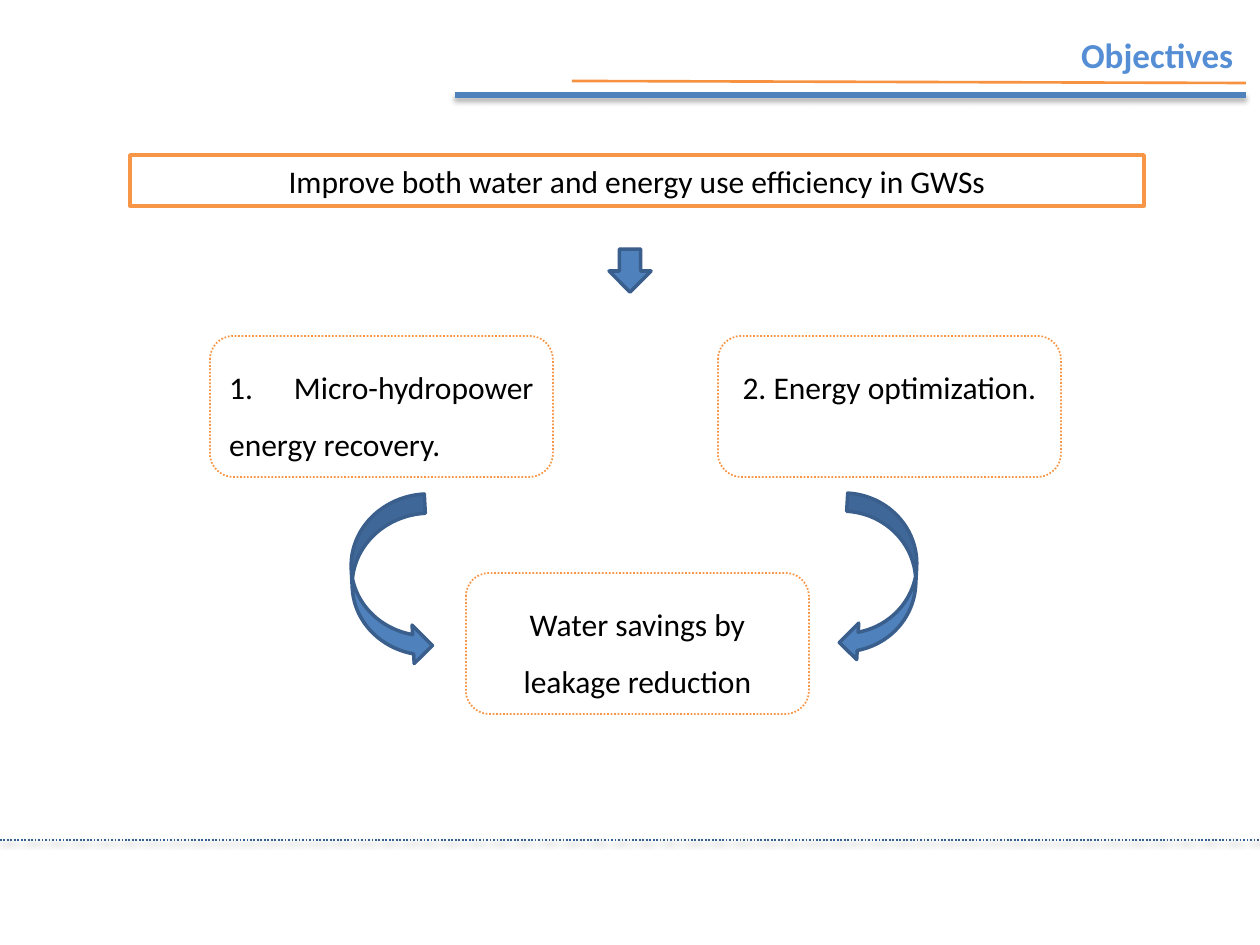
import lxml.etree
import pptx
import pptx.util
import pptx.dml.color
import pptx.enum.dml
import pptx.enum.shapes
import pptx.enum.text
import pptx.oxml

RGB = pptx.dml.color.RGBColor
SHAPE = pptx.enum.shapes.MSO_SHAPE
ALIGN = pptx.enum.text.PP_ALIGN
ANCHOR = pptx.enum.text.MSO_ANCHOR
DOTTED = pptx.enum.dml.MSO_LINE.ROUND_DOT

WHITE = RGB(0xFF, 0xFF, 0xFF)
BLACK = RGB(0x00, 0x00, 0x00)
BLUE = RGB(0x4F, 0x81, 0xBD)
DARK_BLUE = RGB(0x3A, 0x5F, 0x8C)
FOOTER_BLUE = RGB(0x37, 0x60, 0x92)
TITLE_BLUE = RGB(0x55, 0x8E, 0xD5)
ORANGE = RGB(0xF7, 0x96, 0x46)
RULE_ORANGE = RGB(0xF6, 0x92, 0x40)

SHADOW = (
    '<a:outerShdw xmlns:a="http://schemas.openxmlformats.org/drawingml/2006/main"'
    ' blurRad="39370" dist="22860" dir="5400000" rotWithShape="0">'
    '<a:srgbClr val="000000"><a:alpha val="35000"/></a:srgbClr></a:outerShdw>'
)


def px(n):
    return pptx.util.Emu(round(n * 914400 / 126))


class Deck:
    """Holds the text style and the current slide, and draws elements on it."""

    font = {"name": "Calibri", "size": pptx.util.Pt(18), "bold": False}

    def __init__(self, width, height):
        self.prs = pptx.Presentation()
        self.prs.slide_width, self.prs.slide_height = px(width), px(height)
        self.s = self.prs.slides.add_slide(self.prs.slide_layouts[5])

    def label(self, sp, text, align, anchor, color=BLACK, spacing=1.0, **font):
        tf = sp.text_frame
        tf.word_wrap = True
        tf.vertical_anchor = anchor
        p = tf.paragraphs[0]
        p.alignment, p.line_spacing = align, spacing
        r = p.add_run()
        r.text = text
        for key, value in {**self.font, **font}.items():
            setattr(r.font, key, value)
        r.font.color.rgb = color

    def title(self, text, x, y, w, h):
        sp = self.s.shapes.title
        sp.left, sp.top, sp.width, sp.height = map(px, (x, y, w, h))
        self.label(sp, text, ALIGN.RIGHT, ANCHOR.MIDDLE, TITLE_BLUE,
                   size=pptx.util.Pt(20), bold=True)

    def stroke(self, line, color, width, dash=None):
        line.color.rgb = color
        line.width = pptx.util.Pt(width)
        if dash is not None:
            line.dash_style = dash

    def rule(self, x1, y1, x2, y2, color, width, dash=None, shadow=False):
        sp = self.s.shapes.add_connector(
            pptx.enum.shapes.MSO_CONNECTOR.STRAIGHT, *map(px, (x1, y1, x2, y2)))
        self.stroke(sp.line, color, width, dash)
        effects = lxml.etree.SubElement(
            sp.element.spPr, pptx.oxml.ns.qn("a:effectLst"))
        if shadow:
            effects.append(pptx.oxml.parse_xml(SHADOW))

    def shape(self, kind, x, y, w, h, fill, line, width, dash=None):
        sp = self.s.shapes.add_shape(kind, *map(px, (x, y, w, h)))
        sp.shadow.inherit = False
        sp.fill.solid()
        sp.fill.fore_color.rgb = fill
        self.stroke(sp.line, line, width, dash)
        return sp

    def banner(self, text, x, y, w, h):
        sp = self.shape(SHAPE.RECTANGLE, x, y, w, h, WHITE, ORANGE, 2)
        self.label(sp, text, ALIGN.CENTER, ANCHOR.MIDDLE)

    def card(self, text, x, y, align=ALIGN.CENTER):
        sp = self.shape(SHAPE.ROUNDED_RECTANGLE, x, y, 343, 141,
                        WHITE, ORANGE, 1, DOTTED)
        self.label(sp, text, align, ANCHOR.TOP, spacing=1.5)

    def arrow(self, kind, x, y, w, h, rotation=0):
        sp = self.shape(kind, x, y, w, h, BLUE, DARK_BLUE, 2)
        sp.rotation = rotation


def main():
    deck = Deck(1260, 945)
    deck.rule(0, 840, 1260, 840, FOOTER_BLUE, 1, DOTTED, shadow=True)
    deck.rule(455, 95, 1246, 95, BLUE, 3, shadow=True)
    deck.rule(572, 81, 1246, 83, RULE_ORANGE, 1.5)
    deck.title("Objectives", 1067, 27, 179, 55)
    deck.banner("Improve both water and energy use efficiency in GWSs",
                130, 155, 1014, 51)
    deck.arrow(SHAPE.DOWN_ARROW, 609, 249, 42, 43)
    deck.card("1. Micro-hydropower energy recovery.", 210, 336, ALIGN.JUSTIFY)
    deck.card("2. Energy optimization.", 718, 336)
    deck.card("Water savings by leakage reduction", 466, 573)
    deck.arrow(SHAPE.CURVED_LEFT_ARROW, 843, 495, 73, 168, 3.2)
    deck.arrow(SHAPE.CURVED_RIGHT_ARROW, 352, 496, 77, 171, 356.9)
    deck.prs.save("out.pptx")


if __name__ == "__main__":
    main()
